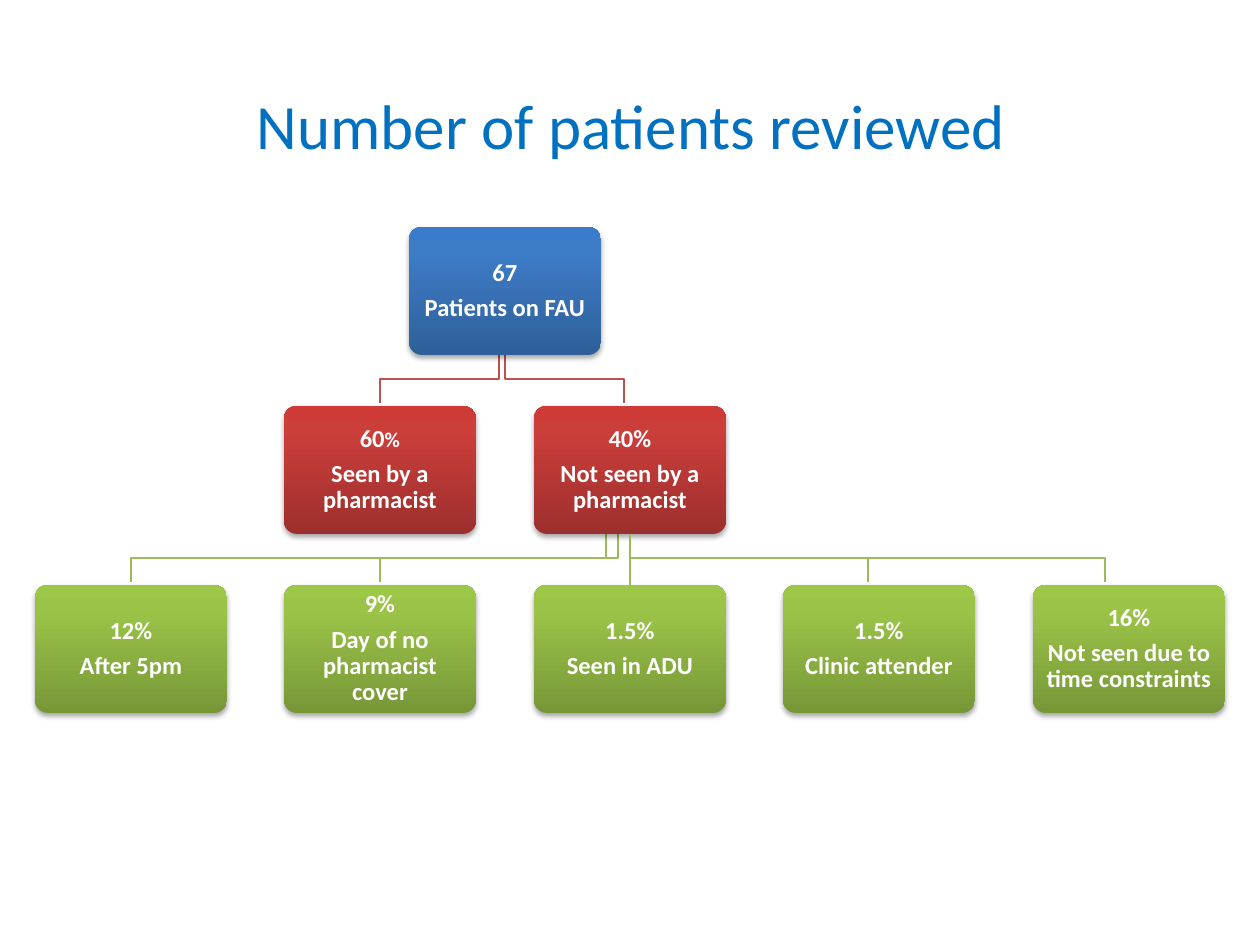
"""Build a slide with a tree of reviewed patients."""
from copy import deepcopy
from dataclasses import dataclass

from lxml import etree
from pptx import Presentation
from pptx import util as u
from pptx.dml.color import RGBColor
from pptx.enum import shapes, text
from pptx.oxml.ns import qn

PX = u.Inches(1) / 126
CARD_WIDTH, CARD_HEIGHT = 192, 128
FIRST_LEFT, FIRST_TOP, ROW_STEP = 35, 227, 179
TWO_COLUMNS = 499
FONT = "Calibri"
BLUE = ("2F5F99", "3D7CC7", "3A7CCB")
RED = ("9C2F2D", "CB3E3A", "CE3B37")
GREEN = ("779737", "9BC348", "9DC746")
RED_LINE, GREEN_LINE = "C0504D", "9BBB59"


@dataclass
class Group:
    """A card of the tree, placed by column and row."""
    column: float
    row: int
    gradient: tuple[str, str, str]
    figure: str
    unit: str
    label: str
    unit_size: int = 14

    @property
    def left(self) -> int:
        """Return the left edge in px."""
        return FIRST_LEFT + int(self.column * TWO_COLUMNS / 2)

    @property
    def top(self) -> int:
        """Return the top edge in px."""
        return FIRST_TOP + self.row * ROW_STEP


@dataclass
class Branch:
    """A bent line that leaves a row at one x and reaches the next at another."""
    row: int
    start_x: int
    end_x: int
    color: str


ALL_PATIENTS = Group(1.5, 0, BLUE, "67", "", "Patients on FAU")
SEEN = Group(1, 1, RED, "60", "%", "Seen by a pharmacist", 12)
NOT_SEEN = Group(2, 1, RED, "40", "%", "Not seen by a pharmacist")
REASONS = [
    Group(column, 2, GREEN, figure, "%", label)
    for column, (figure, label) in enumerate([
        ("12", "After 5pm"),
        ("9", "Day of no pharmacist cover"),
        ("1.5", "Seen in ADU"),
        ("1.5", "Clinic attender"),
        ("16", "Not seen due to time constraints"),
    ])
]
BRANCHES = [
    Branch(0, 499, 380, RED_LINE),
    Branch(0, 505, 624, RED_LINE),
    Branch(1, 606, 131, GREEN_LINE),
    Branch(1, 618, 380, GREEN_LINE),
    Branch(1, 630, 868, GREEN_LINE),
    Branch(1, 630, 1105, GREEN_LINE),
]


def px(length: int) -> u.Emu:
    """Turn px into EMU."""
    return u.Emu(round(length * PX))


def rgb(color: str) -> RGBColor:
    """Turn a hex string into a colour."""
    return RGBColor.from_string(color)


def write_text(frame, paragraphs, *, color: str, bold: bool = False,
               margin: int = 12, line_spacing: float = 1.0, space_after: int = 0) -> None:
    """Write centred paragraphs, each a list of (wording, size) runs."""
    frame.word_wrap = True
    frame.vertical_anchor = text.MSO_ANCHOR.MIDDLE
    frame.margin_left = frame.margin_right = px(margin)
    frame.margin_top = frame.margin_bottom = px(margin)
    for index, runs in enumerate(paragraphs):
        paragraph = frame.add_paragraph() if index else frame.paragraphs[0]
        paragraph.alignment = text.PP_ALIGN.CENTER
        paragraph.line_spacing = line_spacing
        paragraph.space_after = u.Pt(space_after)
        for wording, size in runs:
            run = paragraph.add_run()
            run.text = wording
            run.font.name, run.font.size, run.font.bold = FONT, u.Pt(size), bold
            run.font.color.rgb = rgb(color)


def add_shadow(card) -> None:
    """Give a card a soft shadow below it."""
    card.shadow.inherit = False
    effects = card._element.spPr.find(qn("a:effectLst"))
    shadow = etree.SubElement(effects, qn("a:outerShdw"), blurRad="40000", dist="23000",
                              dir="5400000", rotWithShape="0")
    shade = etree.SubElement(shadow, qn("a:srgbClr"), val="000000")
    etree.SubElement(shade, qn("a:alpha"), val="35000")


def add_card(slide, group: Group):
    """Draw one group as a rounded card with its figure and label."""
    card = slide.shapes.add_shape(
        shapes.MSO_SHAPE.ROUNDED_RECTANGLE,
        px(group.left), px(group.top), px(CARD_WIDTH), px(CARD_HEIGHT))
    card.adjustments[0] = 0.1
    card.fill.gradient()
    card.fill.gradient_angle = 90
    stops = card._element.spPr.find(".//" + qn("a:gsLst"))
    stops.append(deepcopy(stops[0]))
    for stop, position, color in zip(card.fill.gradient_stops, (0, 0.8, 1), group.gradient):
        stop.position = position
        stop.color.rgb = rgb(color)
    card.line.fill.background()
    add_shadow(card)
    figure = [(group.figure, 14)]
    if group.unit:
        figure.append((group.unit, group.unit_size))
    write_text(card.text_frame, [figure, [(group.label, 14)]], color="FFFFFF",
               bold=True, margin=7, line_spacing=0.9, space_after=5)
    return card


def add_branch(slide, branch: Branch) -> None:
    """Draw one bent line between two rows."""
    top = FIRST_TOP + branch.row * ROW_STEP + CARD_HEIGHT
    bend, end = top + 24, top + 48
    builder = slide.shapes.build_freeform(px(branch.start_x), px(top))
    corners = [(branch.start_x, bend), (branch.end_x, bend), (branch.end_x, end)]
    builder.add_line_segments([(px(x), px(y)) for x, y in corners], close=False)
    line = builder.convert_to_shape()
    line.fill.background()
    line.line.color.rgb = rgb(branch.color)
    line.line.width = u.Pt(0.75)
    line.shadow.inherit = False


def join_cards(slide, parent, child, color: str) -> None:
    """Join the bottom of one card to the top of the card under it."""
    link = slide.shapes.add_connector(shapes.MSO_CONNECTOR.STRAIGHT, 0, 0, 0, 0)
    link.begin_connect(parent, 2)
    link.end_connect(child, 0)
    link.line.color.rgb = rgb(color)
    link.line.width = u.Pt(0.75)
    etree.SubElement(link._element.spPr, qn("a:effectLst"))


def main() -> None:
    """Build and save the slide."""
    deck = Presentation()
    deck.slide_width, deck.slide_height = px(1260), px(945)
    slide = deck.slides.add_slide(deck.slide_layouts[6])
    title = slide.shapes.add_textbox(px(64), px(45), px(1134), px(158))
    write_text(title.text_frame, [[("Number of patients reviewed", 36)]], color="0070C0")
    for branch in BRANCHES:
        add_branch(slide, branch)
    add_card(slide, ALL_PATIENTS)
    add_card(slide, SEEN)
    not_seen_card = add_card(slide, NOT_SEEN)
    reason_cards = [add_card(slide, reason) for reason in REASONS]
    join_cards(slide, not_seen_card, reason_cards[2], GREEN_LINE)
    deck.save("out.pptx")


if __name__ == "__main__":
    main()
